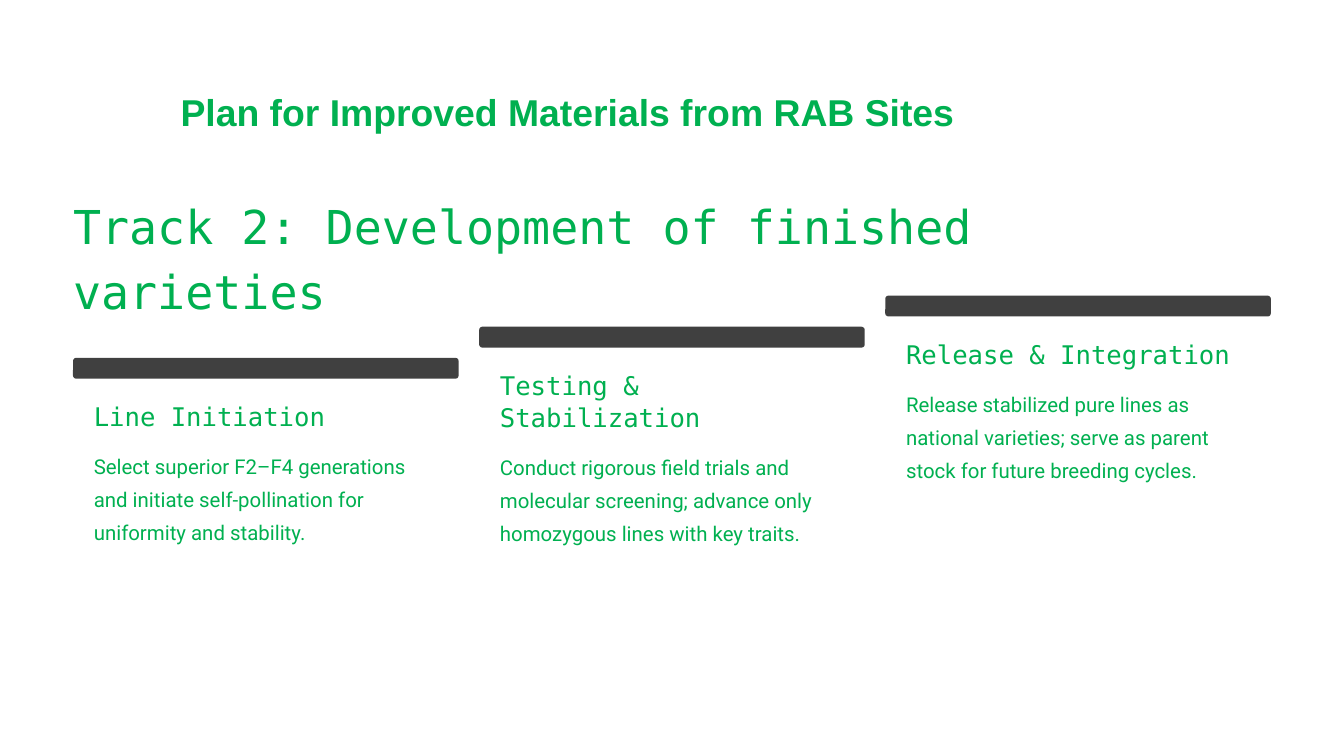
from pptx import Presentation
from pptx.dml.color import RGBColor
from pptx.enum import shapes, text
from pptx.util import Pt

COLORS = {"green": "00B050", "bar": "404040"}
MONO, SANS, BODY = "DejaVu Sans Mono", "Arial", "Roboto"

# Staircase geometry, in points
LEFT, BAR_TOP = 62.6, 306.7
STEP_X, STEP_Y = 348.1, -26.65
BAR_W, BAR_H = 330.5, 17.9
INDENT, HEADING_DROP, HEADING_LINE = 17.8, 36, 27.5
TEXT_W = 294.5

# Heading, heading width, heading lines, description
STEPS = [
    ("Line Initiation", 223.2, 1,
     "Select superior F2–F4 generations and initiate self-pollination "
     "for uniformity and stability."),
    ("Testing & Stabilization", TEXT_W, 2,
     "Conduct rigorous field trials and molecular screening; advance only "
     "homozygous lines with key traits."),
    ("Release & Integration", 281.5, 1,
     "Release stabilized pure lines as national varieties; serve as parent "
     "stock for future breeding cycles."),
]


def color(name):
    return RGBColor.from_string(COLORS[name])


def set_text(tf, words, size, font, bold=False):
    p = tf.paragraphs[0]
    p.text = words
    p.alignment = text.PP_ALIGN.LEFT
    p.font.size = Pt(size)
    p.font.name = font
    p.font.bold = bold
    p.font.color.rgb = color("green")
    return p


def add_title(s, words):
    sp = s.shapes.title
    sp.left, sp.top, sp.width, sp.height = Pt(147.6), Pt(67), Pt(793.4), Pt(48.2)
    tf = sp.text_frame
    tf.word_wrap = True
    tf.vertical_anchor = text.MSO_ANCHOR.TOP
    tf.auto_size = text.MSO_AUTO_SIZE.SHAPE_TO_FIT_TEXT
    p = set_text(tf, words, 32, SANS, bold=True)
    p.line_spacing = 1.15
    p.space_before, p.space_after = Pt(0), Pt(6)


def add_text(s, x, y, w, h, words, size, font, leading, wrap=True):
    sp = s.shapes.add_textbox(Pt(x), Pt(y), Pt(w), Pt(h))
    tf = sp.text_frame
    tf.margin_left = tf.margin_top = tf.margin_right = tf.margin_bottom = 0
    tf.word_wrap = wrap
    set_text(tf, words, size, font).line_spacing = Pt(leading)


def add_bar(s, x, y):
    sp = s.shapes.add_shape(shapes.MSO_SHAPE.ROUNDED_RECTANGLE,
                            Pt(x), Pt(y), Pt(BAR_W), Pt(BAR_H))
    sp.adjustments[0] = 0.15
    sp.shadow.inherit = False
    sp.fill.solid()
    sp.fill.fore_color.rgb = color("bar")
    sp.line.fill.background()


def add_step(s, i, heading, width, lines, description):
    x, y = LEFT + i * STEP_X, BAR_TOP + i * STEP_Y
    add_bar(s, x, y)
    x, y = x + INDENT, y + HEADING_DROP
    add_text(s, x, y, width, lines * 28, heading, 22, MONO, HEADING_LINE,
             wrap=lines > 1)
    y += 11.5 + lines * HEADING_LINE
    add_text(s, x, y, TEXT_W, 85.7, description, 17.5, BODY, 28.5)


def main():
    prs = Presentation()
    prs.slide_width, prs.slide_height = Pt(1152), Pt(648)
    s = prs.slides.add_slide(prs.slide_layouts[5])

    # Title and track name
    add_title(s, "Plan for Improved Materials from RAB Sites")
    add_text(s, LEFT, 162, 857.5, 56.2,
             "Track 2: Development of finished varieties",
             40, MONO, 55.5, wrap=False)

    # Three rising steps
    for i, step in enumerate(STEPS):
        add_step(s, i, *step)

    prs.save("out.pptx")


if __name__ == "__main__":
    main()
